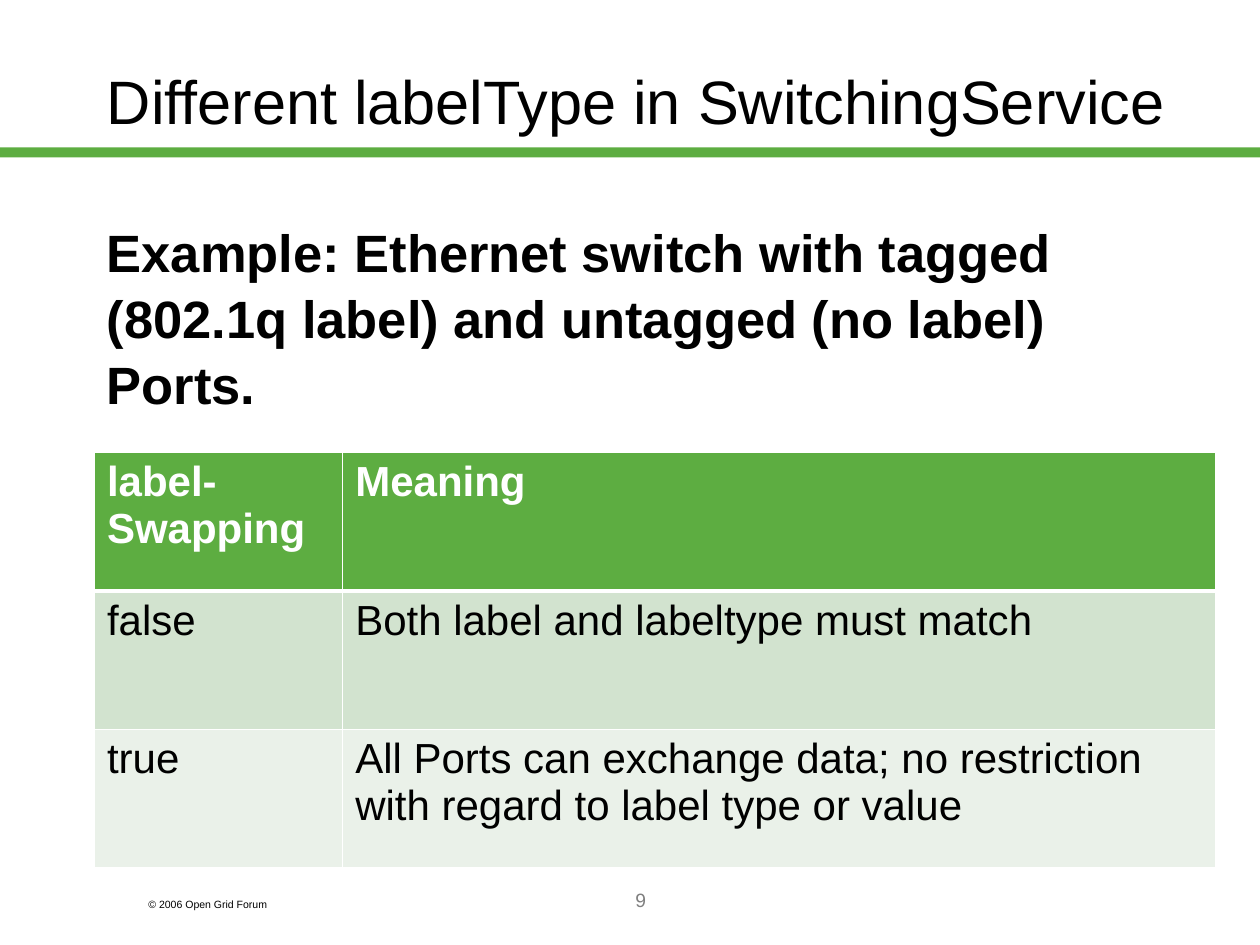
import pptx
import pptx.dml.color
import pptx.enum.shapes
import pptx.enum.text
import pptx.oxml
import pptx.oxml.ns
import pptx.util
from pptx.util import Inches

GREEN, WHITE, BLACK, GRAY = "5DAD41", "FFFFFF", "000000", "808080"
ALIGN = pptx.enum.text.PP_ALIGN
ANCHOR = pptx.enum.text.MSO_ANCHOR

TEXTS = [
    ("© 2006 Open Grid Forum", (1.08, 7.08, 1.5, 0.2), dict(size=6)),
    ("Different labelType in SwitchingService", (0.75, 0.17, 8.9, 1.25),
     dict(size=35, anchor=ANCHOR.MIDDLE)),
    ("9", (2.17, 7, 5.83, 0.5), dict(size=11, color=GRAY, align=ALIGN.CENTER)),
    ("Example: Ethernet switch with tagged (802.1q label) and untagged (no label) Ports.",
     (0.75, 1.67, 8.5, 4.5), dict(size=30, bold=True, spacing=1.05)),
]
ROWS = [
    ("label-Swapping", "Meaning"),
    ("false", "Both label and labeltype must match"),
    ("true", "All Ports can exchange data; no restriction with regard to label type or value"),
]
ROW_FILLS = [GREEN, "D2E3CF", "EAF1E9"]
COLUMN_WIDTHS = [1.97, 6.93]
ROW_HEIGHT = 1.1


def rgb(value):
    return pptx.dml.color.RGBColor.from_string(value)


def write(frame, text, size=24, color=BLACK, bold=False, align=ALIGN.LEFT,
          anchor=ANCHOR.TOP, spacing=None):
    frame.word_wrap = True
    frame.vertical_anchor = anchor
    paragraph = frame.paragraphs[0]
    paragraph.alignment = align
    paragraph.line_spacing = spacing
    run = paragraph.add_run()
    run.text = text
    run.font.name = "Arial"
    run.font.size = pptx.util.Pt(size)
    run.font.bold = bold
    run.font.color.rgb = rgb(color)


def set_borders(cell, bottom_width):
    properties = cell._tc.get_or_add_tcPr()
    widths = {"lnL": 1, "lnR": 1, "lnT": 1, "lnB": bottom_width}
    for position, (side, width) in enumerate(widths.items()):
        line = pptx.oxml.parse_xml(
            f'<a:{side} {pptx.oxml.ns.nsdecls("a")} w="{pptx.util.Pt(width)}">'
            f'<a:solidFill><a:srgbClr val="{WHITE}"/></a:solidFill></a:{side}>')
        properties.insert(position, line)


def add_band(slide):
    band = slide.shapes.add_shape(pptx.enum.shapes.MSO_SHAPE.RECTANGLE,
                                  0, Inches(1.17), Inches(10), Inches(0.08))
    band.shadow.inherit = False
    band.fill.solid()
    band.fill.fore_color.rgb = rgb(GREEN)
    band.line.fill.background()


def add_meaning_table(slide):
    table = slide.shapes.add_table(
        len(ROWS), len(COLUMN_WIDTHS), Inches(0.75), Inches(3.59),
        Inches(sum(COLUMN_WIDTHS)), Inches(ROW_HEIGHT * len(ROWS))).table
    for column, width in zip(table.columns, COLUMN_WIDTHS):
        column.width = Inches(width)
    for row_index, (texts, fill) in enumerate(zip(ROWS, ROW_FILLS)):
        table.rows[row_index].height = Inches(ROW_HEIGHT)
        header = row_index == 0
        for column_index, text in enumerate(texts):
            cell = table.cell(row_index, column_index)
            cell.fill.solid()
            cell.fill.fore_color.rgb = rgb(fill)
            set_borders(cell, 3 if header else 1)
            write(cell.text_frame, text, color=WHITE if header else BLACK, bold=header)


def main():
    presentation = pptx.Presentation()
    presentation.slide_width = Inches(10)
    presentation.slide_height = Inches(7.5)
    slide = presentation.slides.add_slide(presentation.slide_layouts[6])
    add_band(slide)
    for text, box, text_format in TEXTS:
        shape = slide.shapes.add_textbox(*map(Inches, box))
        write(shape.text_frame, text, **text_format)
    add_meaning_table(slide)
    presentation.save("out.pptx")


if __name__ == "__main__":
    main()
